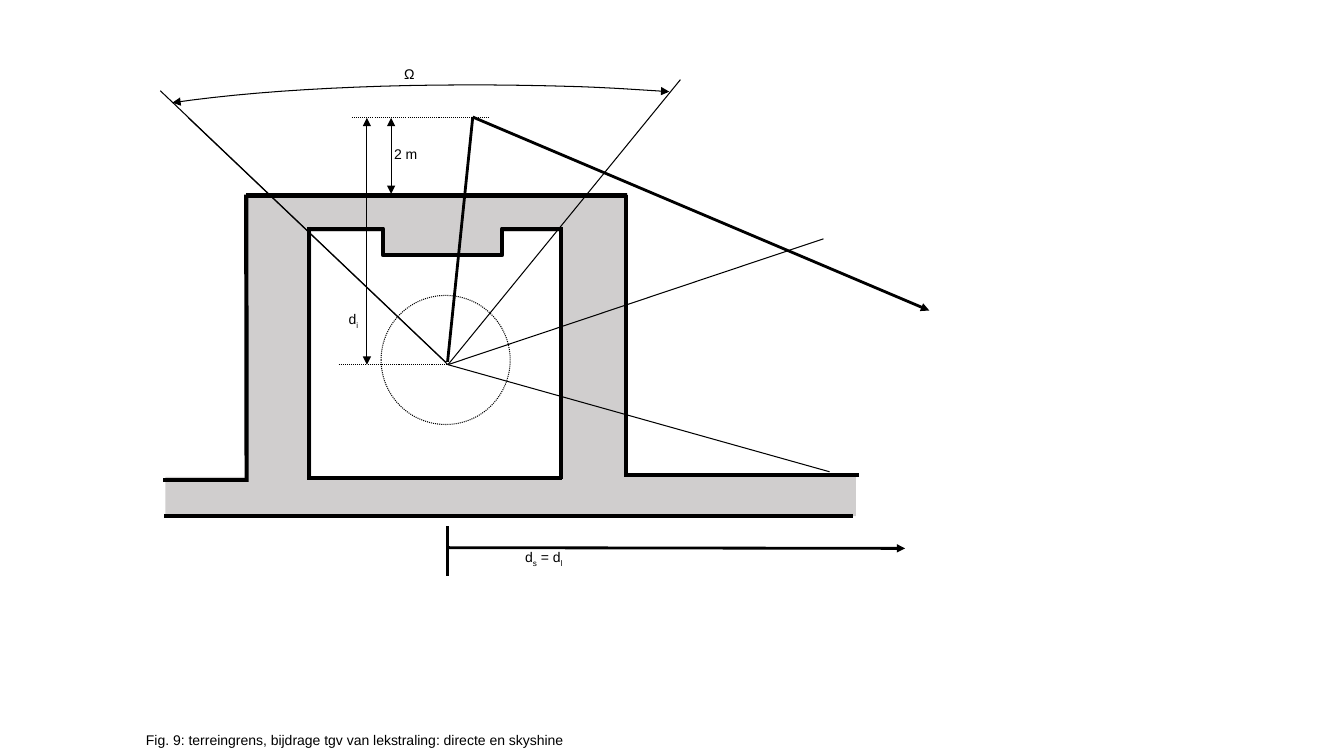
from pptx import Presentation
from pptx.dml.color import RGBColor
from pptx.enum.dml import MSO_LINE_DASH_STYLE as DASH
from pptx.enum.shapes import MSO_CONNECTOR as CONNECTOR, MSO_SHAPE as SHAPE
from pptx.oxml.ns import qn
from pptx.util import Pt
from lxml.etree import SubElement

BLACK, WHITE, CONCRETE = "000000", "FFFFFF", "D0CECE"
THIN, RAY, WALL = 0.75, 2, 3
DOTTED = DASH.ROUND_DOT
SOURCE = (320, 260.5)
SCATTER = (337.7, 83.6)


def color(hex_code):
    return RGBColor.from_string(hex_code)


def style_line(line, width, dash=None, ends=(), hex_code=BLACK):
    line.color.rgb = color(hex_code)
    line.width = Pt(width)
    if dash:
        line.dash_style = dash
    for end in ends:
        SubElement(line._get_or_add_ln(), qn(f"a:{end}"), type="triangle")


def add_line(slide, start, stop, width, dash=None, ends=()):
    points = [Pt(v) for v in (*start, *stop)]
    connector = slide.shapes.add_connector(CONNECTOR.STRAIGHT, *points)
    style_line(connector.line, width, dash, ends)
    SubElement(connector._element.spPr, qn("a:effectLst"))


def add_block(slide, kind, box, fill):
    block = slide.shapes.add_shape(kind, *[Pt(v) for v in box])
    block.shadow.inherit = False
    block.fill.solid()
    block.fill.fore_color.rgb = color(fill)
    block.line.fill.background()
    return block


def add_outline(slide, points, width, ends=()):
    corners = [(Pt(x), Pt(y)) for x, y in points]
    builder = slide.shapes.build_freeform(*corners[0])
    builder.add_line_segments(corners[1:], close=False)
    outline = builder.convert_to_shape()
    outline.shadow.inherit = False
    outline.fill.background()
    style_line(outline.line, width, ends=ends)


def add_label(slide, box, parts, inset=None):
    """Each part is a text and whether it is a subscript."""
    label = slide.shapes.add_textbox(*[Pt(v) for v in box])
    frame = label.text_frame
    frame.word_wrap = True
    if inset is not None:
        frame.margin_left = frame.margin_right = Pt(inset)
        frame.margin_top = frame.margin_bottom = Pt(inset)
    for text, subscript in parts:
        run = frame.paragraphs[0].add_run()
        run.text = text
        run.font.size = Pt(10)
        run.font.name = "Arial"
        run.font.color.rgb = color(BLACK)
        if subscript:
            run._r.get_or_add_rPr().set("baseline", "-30000")


def bezier(p0, p1, p2, p3, steps=16):
    for i in range(1, steps + 1):
        t = i / steps
        u = 1 - t
        yield tuple(u**3 * a + 3 * u * u * t * b + 3 * u * t * t * c + t**3 * d
                    for a, b, c, d in zip(p0, p1, p2, p3))


def draw_labels(slide):
    add_label(slide, (249.1, 221.8, 13, 11.5), [("d", False), ("i", True)], 0)
    add_label(slide, (288.7, 46.8, 14.4, 11.5), [("Ω", False)], 0)
    add_label(slide, (375.1, 391.7, 30.2, 11.5),
              [("d", False), ("s", True), (" = d", False), ("l", True)], 0)
    add_label(slide, (281.5, 103.7, 23.8, 15.1), [("2 m", False)], 0)
    add_label(slide, (97.2, 519.1, 480.2, 19.4),
              [("Fig. 9: terreingrens, bijdrage tgv van lekstraling: "
                "directe en skyshine", False)])


def draw_bunker(slide):
    # Concrete: ceiling block, floor slab, side walls, roof
    ceiling = add_block(slide, SHAPE.RECTANGLE, (273.6, 165.6, 85, 17.3), CONCRETE)
    style_line(ceiling.line, 1, hex_code=CONCRETE)
    for box in [(118.1, 340.6, 493.2, 28.1), (176.4, 163.4, 46.1, 196.6),
                (401, 163.4, 46.1, 194.4), (177.1, 138.2, 271.4, 27.4)]:
        add_block(slide, SHAPE.RECTANGLE, box, CONCRETE)

    # Dotted circle around the source
    circle = add_block(slide, SHAPE.OVAL, (272.2, 211, 92.2, 92.2), WHITE)
    style_line(circle.line, THIN, DOTTED)

    # Wall, roof and ground edges
    for start, stop in [
        ((400.5, 162), (400.5, 342)), ((219.6, 341.3), (401.8, 341.3)),
        ((116.6, 342.7), (176.4, 342.7)), ((175.9, 139), (176.2, 344.2)),
        ((221, 162), (221, 342)), ((117.4, 368.6), (609.1, 368.6)),
        ((175.7, 139.7), (447.8, 139.7)), ((447.3, 139), (447.3, 340.6)),
        ((447.8, 339.1), (613.4, 339.1)),
    ]:
        add_line(slide, start, stop, WALL)
    add_outline(slide, [(220.3, 163.4), (273.6, 163.4), (273.6, 182.2),
                        (358.6, 182.2), (358.6, 163.4), (401.8, 163.4)], WALL)


def draw_rays(slide):
    # Scattered path over the roof
    add_line(slide, SCATTER, (663.8, 221.8), RAY, ends=["tailEnd"])
    add_line(slide, (319.7, 258.5), SCATTER, RAY)

    # Thin rays from the source
    for stop in [(134.6, 84.2), (592.6, 337), (588.2, 170.6), (486, 56.9)]:
        add_line(slide, SOURCE, stop, THIN)
    add_line(slide, (318.2, 258.5), (114.5, 64.8), THIN)

    # Opening angle
    right, crest, left = (478.1, 65.5), (413.3, 61.9), (123.1, 73.4)
    arc = [right, *bezier(right, (456.5, 64.1), (434.9, 62.6), crest),
           *bezier(crest, (302.4, 58.3), (196.6, 62.6), left)]
    add_outline(slide, arc, THIN, ["headEnd", "tailEnd"])


def draw_dimensions(slide):
    # Heights above the roof and above the source
    add_line(slide, (251.3, 83.6), (349.9, 83.6), THIN, DOTTED)
    add_line(slide, (241.9, 260.6), (319, 260.6), THIN, DOTTED)
    for x, bottom in [(279.4, 138.5), (262.1, 260.6)]:
        add_line(slide, (x, 84.2), (x, bottom), THIN, ends=["headEnd", "tailEnd"])

    # Distance to the site boundary
    add_line(slide, (319.7, 375.8), (319.7, 411.1), RAY)
    add_line(slide, (319, 391.2), (646.6, 391.7), RAY, ends=["tailEnd"])


def main():
    deck = Presentation()
    deck.slide_width, deck.slide_height = Pt(960), Pt(540)
    slide = deck.slides.add_slide(deck.slide_layouts[6])
    draw_labels(slide)
    draw_bunker(slide)
    draw_rays(slide)
    draw_dimensions(slide)
    deck.save("out.pptx")


if __name__ == "__main__":
    main()
